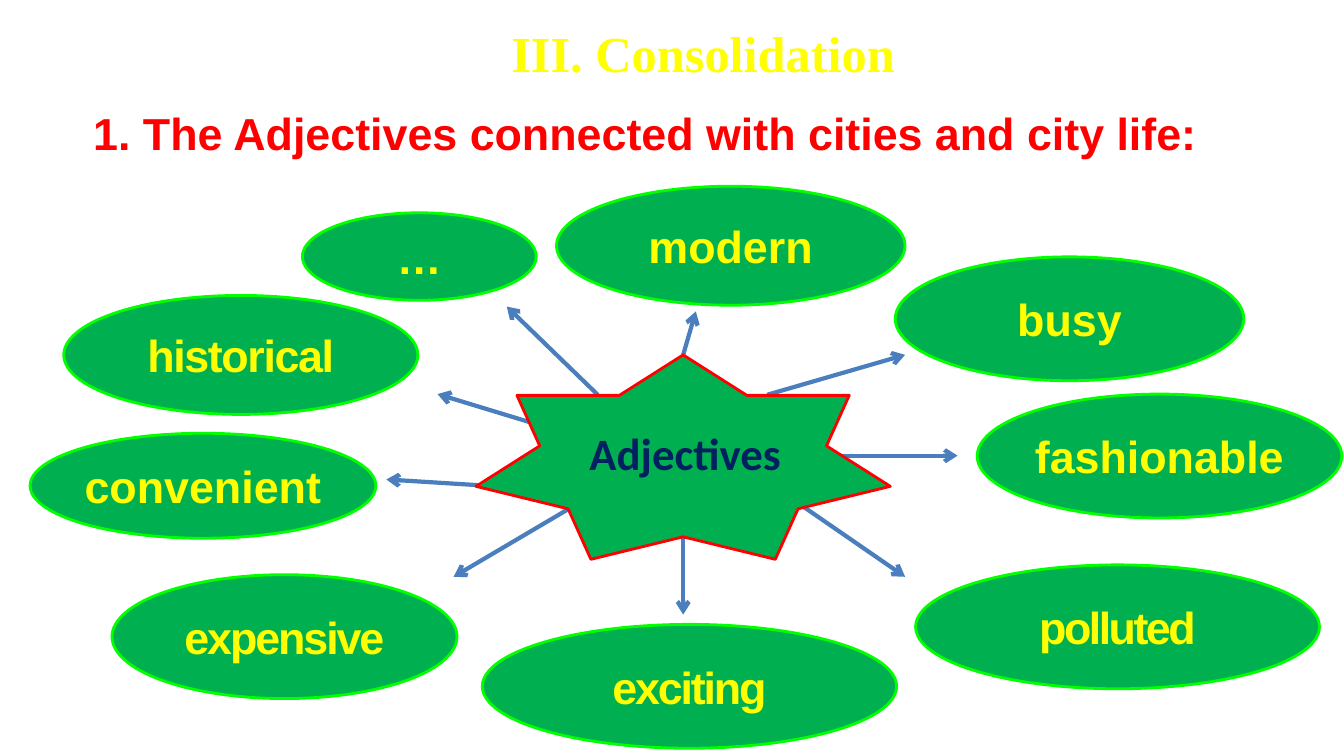
from lxml.etree import SubElement
from pptx import Presentation
from pptx.dml.color import RGBColor
from pptx.enum.shapes import MSO_CONNECTOR as Connector, MSO_SHAPE as Shape
from pptx.enum.text import MSO_ANCHOR as Anchor, MSO_AUTO_SIZE as AutoSize, PP_ALIGN as Align
from pptx.oxml.ns import qn
from pptx.util import Pt

COLORS = {
    "white": "FFFFFF",
    "green": "00B050",
    "lime": "00FF00",
    "yellow": "FFFF00",
    "red": "FF0000",
    "navy": "002060",
    "blue": "4B7EBC",
}

# Word, (left, top, width, height), letter spacing
ADJECTIVES = [
    ("modern", (397.5, 133, 249, 85), 0),
    ("busy", (639.5, 183.5, 249, 88.5), 0),
    ("fashionable", (698, 281.5, 260.5, 88.5), 0),
    ("polluted", (654, 403.5, 288.5, 88.5), -1.8),
    ("exciting", (344.5, 446, 296, 88.5), -1.6),
    ("historical", (45.5, 211, 253, 85), -1),
    ("expensive", (80, 410.5, 246.5, 88.5), -1.5),
    ("convenient", (21.5, 309.5, 247, 75), 0),
    ("…", (216, 152, 167, 62.5), -1),
]

# Start and tip of each arrow
ARROWS = [
    ((548, 282), (646.5, 253.5)),
    ((595.5, 325.5), (684, 325.5)),
    ((410.5, 361), (324, 412)),
    ((348.5, 347), (276, 342.5)),
    ((381.5, 302.5), (312.5, 281.5)),
    ((488, 372), (488, 439)),
    ((572.5, 361), (646.5, 412)),
    ((488, 253.5), (497, 222.5)),
    ((427, 282), (362, 219)),
]


def rgb(name):
    return RGBColor.from_string(COLORS[name])


def write(shape, text, size, font, color, spacing=0):
    """Put one bold, centred line of text in a shape."""
    para = shape.text_frame.paragraphs[0]
    para.alignment = Align.CENTER
    para.font.size, para.font.name, para.font.bold = Pt(size), font, True
    para.font.color.rgb = rgb(color)
    span = para.add_run()
    span.text = text
    if spacing:
        span._r.get_or_add_rPr().set("spc", str(round(spacing * 100)))


def add_title(page, text, place):
    title = page.shapes.title
    title.left, title.top, title.width, title.height = map(Pt, place)
    title.text_frame.auto_size = AutoSize.NONE
    title.text_frame.word_wrap = False
    write(title, text, 36, "Times New Roman", "yellow")


def add_filled(shapes, kind, place, fill, outline=None):
    shape = shapes.add_shape(kind, *map(Pt, place))
    shape.shadow.inherit = False
    shape.fill.solid()
    shape.fill.fore_color.rgb = rgb(fill)
    if outline:
        shape.line.color.rgb = rgb(outline)
        shape.line.width = Pt(2)
    else:
        shape.line.fill.background()
    frame = shape.text_frame
    frame.word_wrap = True
    frame.vertical_anchor = Anchor.MIDDLE
    frame.margin_left = frame.margin_right = frame.margin_top = frame.margin_bottom = 0
    return shape


def add_arrow(shapes, start, tip):
    arrow = shapes.add_connector(Connector.STRAIGHT, *map(Pt, start + tip))
    arrow.line.color.rgb = rgb("blue")
    arrow.line.width = Pt(3)
    properties = arrow._element.spPr
    SubElement(properties.find(qn("a:ln")), qn("a:tailEnd"), type="arrow")
    SubElement(properties, qn("a:effectLst"))


def main():
    deck = Presentation()
    deck.slide_width, deck.slide_height = Pt(960), Pt(540)
    page = deck.slides.add_slide(deck.slide_layouts[5])

    # Headings
    add_title(page, "III. Consolidation", (345, 12, 314.5, 50.5))
    heading = add_filled(page.shapes, Shape.RECTANGLE, (6.5, 71.5, 909.5, 46), "white")
    write(heading, "1. The Adjectives connected with cities and city life:", 32, "Arial", "red")

    # Star with arrows behind it
    hub = page.shapes.add_group_shape()
    for start, tip in ARROWS:
        add_arrow(hub.shapes, start, tip)
    star = add_filled(hub.shapes, Shape.STAR_7_POINT, (340, 253.5, 296, 146), "green", "red")
    star.text_frame.margin_left = Pt(3)
    write(star, "Adjectives", 32, "Calibri", "navy")

    # Adjectives around the star
    for word, place, spacing in ADJECTIVES:
        oval = add_filled(page.shapes, Shape.OVAL, place, "green", "lime")
        write(oval, word, 32, "Arial", "yellow", spacing)

    deck.save("out.pptx")


if __name__ == "__main__":
    main()
